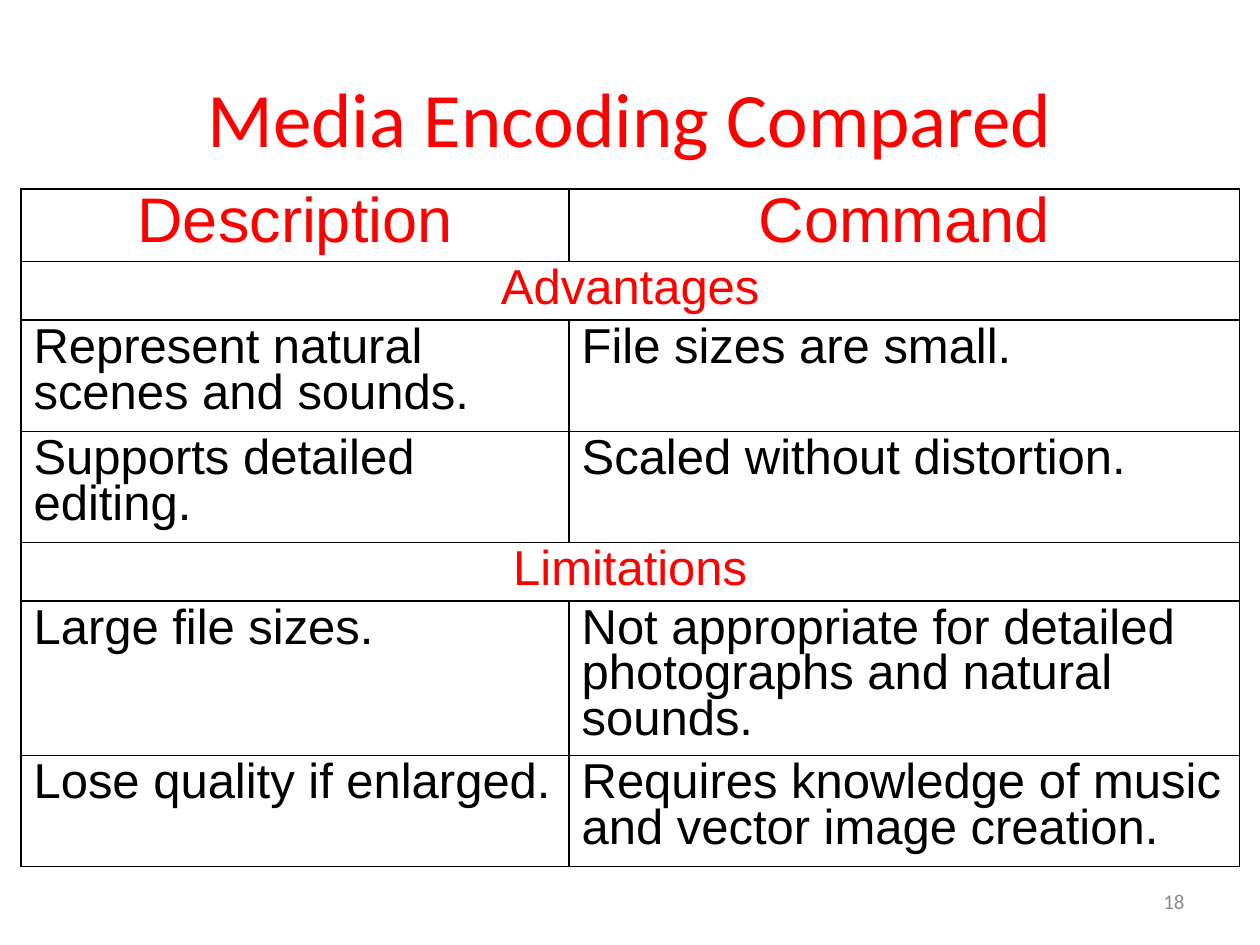
from lxml import etree
from pptx import Presentation
from pptx.dml.color import RGBColor
from pptx.enum.text import MSO_ANCHOR, PP_ALIGN
from pptx.oxml.ns import qn
from pptx.util import Pt

LEFT, CENTER, RIGHT = PP_ALIGN.LEFT, PP_ALIGN.CENTER, PP_ALIGN.RIGHT
TOP, MIDDLE = MSO_ANCHOR.TOP, MSO_ANCHOR.MIDDLE

RED = RGBColor(0xFF, 0x00, 0x00)
BLACK = RGBColor(0x00, 0x00, 0x00)
GRAY = RGBColor(0x8C, 0x8C, 0x8C)

COLUMN_WIDTHS = [313.2, 383.04]
ROW_HEIGHTS = [41.5, 33.5, 63.5, 63.5, 33.5, 87, 63.5]
HEADER = ("Description", "Command")
SECTIONS = [
    ("Advantages", TOP, [
        ("Represent natural scenes and sounds.", "File sizes are small."),
        ("Supports detailed editing.", "Scaled without distortion."),
    ]),
    ("Limitations", TOP, [
        ("Large file sizes.",
         "Not appropriate for detailed photographs and natural sounds."),
        ("Lose quality if enlarged.",
         "Requires knowledge of music and vector image creation."),
    ]),
]


def write(frame, text, *, size, font, color, align=LEFT, spacing=None):
    para = frame.paragraphs[0]
    para.alignment = align
    if spacing:
        para.line_spacing = spacing
    span = para.add_run()
    span.text = text
    span.font.size = Pt(size)
    span.font.name = font
    span.font.bold = False
    span.font.color.rgb = color


def add_label(page, box, text, **style):
    frame = page.shapes.add_textbox(*map(Pt, box)).text_frame
    frame.word_wrap = True
    frame.vertical_anchor = MIDDLE
    write(frame, text, font="Calibri", **style)


def add_borders(cell):
    properties = cell._tc.get_or_add_tcPr()
    for side in ("a:lnL", "a:lnR", "a:lnT", "a:lnB"):
        line = etree.SubElement(properties, qn(side), w=str(Pt(1)))
        fill = etree.SubElement(line, qn("a:solidFill"))
        etree.SubElement(fill, qn("a:srgbClr"), val=str(BLACK))


def fill_cell(cell, text, anchor=TOP, size=28, color=BLACK, align=LEFT):
    cell.vertical_anchor = anchor
    write(cell.text_frame, text, size=size, font="Arial", color=color,
          align=align, spacing=0.84)


def add_comparison(page, left, top):
    frame = page.shapes.add_table(
        len(ROW_HEIGHTS), len(COLUMN_WIDTHS), Pt(left), Pt(top),
        Pt(sum(COLUMN_WIDTHS)), Pt(sum(ROW_HEIGHTS)))
    table = frame.table
    table.first_row = table.horz_banding = False
    for column, width in zip(table.columns, COLUMN_WIDTHS):
        column.width = Pt(width)
    for row, height in zip(table.rows, ROW_HEIGHTS):
        row.height = Pt(height)
    for cell in table.iter_cells():
        add_borders(cell)
        cell.fill.background()
        cell.margin_bottom = Pt(0)

    # Column headings
    for index, text in enumerate(HEADER):
        fill_cell(table.cell(0, index), text, size=36, color=RED, align=CENTER)

    # Each section: a heading across both columns, then its pairs
    row = 1
    for heading, anchor, pairs in SECTIONS:
        table.cell(row, 0).merge(table.cell(row, 1))
        fill_cell(table.cell(row, 0), heading, anchor, color=RED, align=CENTER)
        for row, pair in enumerate(pairs, row + 1):
            for index, text in enumerate(pair):
                fill_cell(table.cell(row, index), text)
        row += 1


def main():
    deck = Presentation()
    deck.slide_width, deck.slide_height = Pt(720), Pt(540)
    page = deck.slides.add_slide(deck.slide_layouts[6])

    # Title
    add_label(page, (36, 21.6, 648, 90), "Media Encoding Compared",
              size=44, color=RED, align=CENTER)
    # Comparison table
    add_comparison(page, 12, 108)
    # Page number
    add_label(page, (516, 500.5, 168, 28.8), "18",
              size=12, color=GRAY, align=RIGHT)

    deck.save("out.pptx")


if __name__ == "__main__":
    main()
